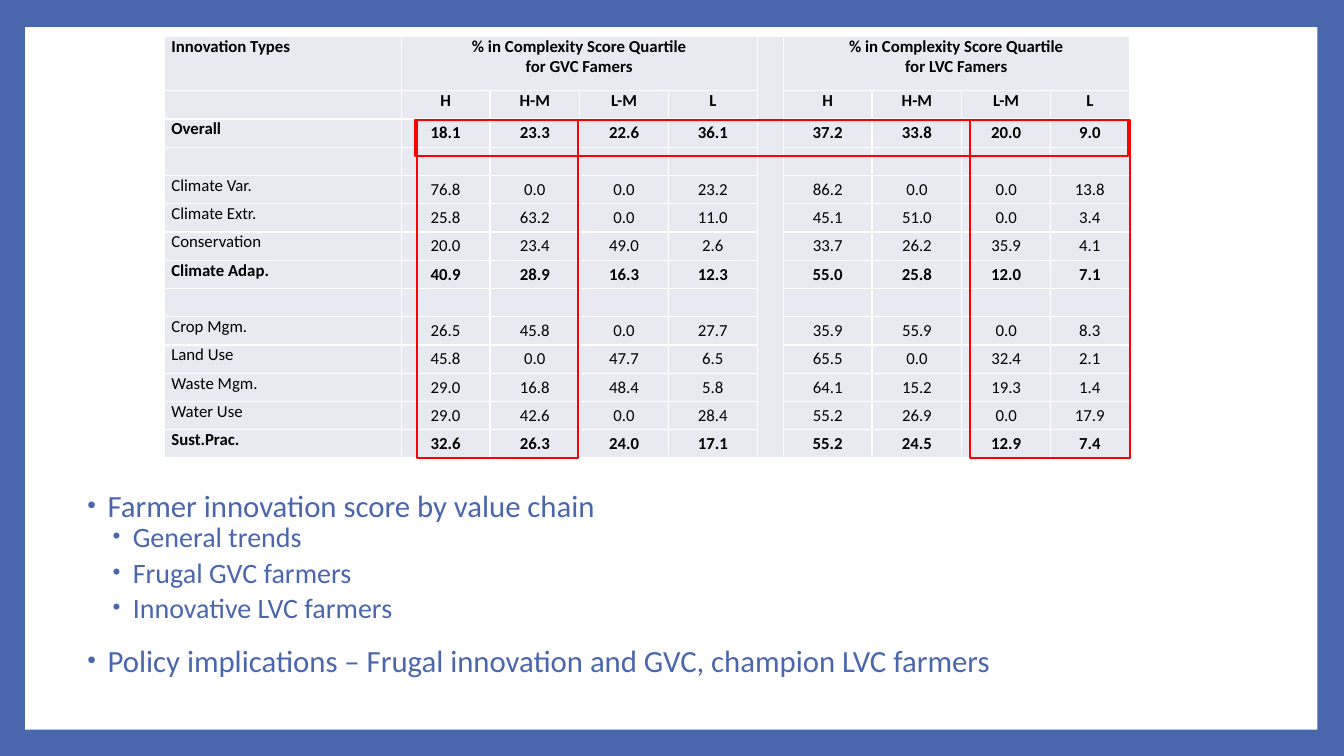
import pptx
import pptx.dml.color
import pptx.enum.shapes
import pptx.enum.text
import pptx.oxml.ns
import pptx.util
from lxml import etree

Pt = pptx.util.Pt
RGBColor = pptx.dml.color.RGBColor
qn = pptx.oxml.ns.qn
ANCHOR = pptx.enum.text.MSO_ANCHOR
ALIGN = pptx.enum.text.PP_ALIGN

BLUE = RGBColor(0x4A, 0x66, 0xAC)
WHITE = RGBColor(0xFF, 0xFF, 0xFF)
BLACK = RGBColor(0, 0, 0)
RED = RGBColor(0xFF, 0, 0)
PALE = RGBColor(0xE9, 0xEA, 0xF1)
FONT = "Calibri"

COLUMN_WIDTHS = [169.2, 63.4, 64.1, 63.4, 63.4, 18.7, 63.4, 64.1, 63.4, 56.2]
HEADER_HEIGHT = 38.9
ROW_HEIGHT = 20.2
GAP_COLUMN = 5
GROUPS = {1: "GVC", 6: "LVC"}
QUARTILES = ["H", "H-M", "L-M", "L"]
BOLD_ROWS = {"Overall", "Climate Adap.", "Sust.Prac."}
SCORES = [
    ("Overall", "18.1 23.3 22.6 36.1 37.2 33.8 20.0 9.0"),
    ("", ""),
    ("Climate Var.", "76.8 0.0 0.0 23.2 86.2 0.0 0.0 13.8"),
    ("Climate Extr.", "25.8 63.2 0.0 11.0 45.1 51.0 0.0 3.4"),
    ("Conservation", "20.0 23.4 49.0 2.6 33.7 26.2 35.9 4.1"),
    ("Climate Adap.", "40.9 28.9 16.3 12.3 55.0 25.8 12.0 7.1"),
    ("", ""),
    ("Crop Mgm.", "26.5 45.8 0.0 27.7 35.9 55.9 0.0 8.3"),
    ("Land Use", "45.8 0.0 47.7 6.5 65.5 0.0 32.4 2.1"),
    ("Waste Mgm.", "29.0 16.8 48.4 5.8 64.1 15.2 19.3 1.4"),
    ("Water Use", "29.0 42.6 0.0 28.4 55.2 26.9 0.0 17.9"),
    ("Sust.Prac.", "32.6 26.3 24.0 17.1 55.2 24.5 12.9 7.4"),
]
POINTS = [
    (0, "Farmer innovation score by value chain"),
    (1, "General trends"),
    (1, "Frugal GVC farmers"),
    (1, "Innovative LVC farmers"),
    (0, "Policy implications – Frugal innovation and GVC, champion LVC farmers"),
]
HIGHLIGHTS = [
    (692.6, 85.7, 114.5, 241.2),
    (298.1, 85.7, 114.5, 241.2),
    (296.6, 85.7, 509, 25.9),
]


def add_span(para, text, size, color, bold=False):
    """Add one formatted run to a paragraph."""
    span = para.add_run()
    span.text = text
    span.font.name = FONT
    span.font.size = Pt(size)
    span.font.bold = bold
    span.font.color.rgb = color


def add_box(page, frame, fill=None, line=None):
    """Add a rectangle with an optional fill and an optional outline."""
    box = page.shapes.add_shape(
        pptx.enum.shapes.MSO_SHAPE.RECTANGLE, *map(Pt, frame))
    box.shadow.inherit = False
    if fill is None:
        box.fill.background()
    else:
        box.fill.solid()
        box.fill.fore_color.rgb = fill
    if line is None:
        box.line.fill.background()
    else:
        box.line.color.rgb = line
        box.line.width = Pt(1.5)


def style_cell(cell):
    """Give a cell its margins, white borders, fill and base text size."""
    cell.margin_left = cell.margin_right = Pt(5)
    cell.margin_top = cell.margin_bottom = 0
    properties = cell._tc.get_or_add_tcPr()
    for side in ("a:lnL", "a:lnR", "a:lnT", "a:lnB"):
        border = etree.SubElement(properties, qn(side), w=str(Pt(1)))
        paint = etree.SubElement(border, qn("a:solidFill"))
        etree.SubElement(paint, qn("a:srgbClr"), val=str(WHITE))
    cell.fill.solid()
    cell.fill.fore_color.rgb = PALE
    para = cell.text_frame.paragraphs[0]
    etree.SubElement(para._p, qn("a:endParaRPr"), sz="1200")


def fill_cell(cell, lines, bold, centred=True, middle=False):
    """Write the lines of a cell, one paragraph each."""
    if middle:
        cell.vertical_anchor = ANCHOR.MIDDLE
    for index, text in enumerate(lines):
        frame = cell.text_frame
        para = frame.add_paragraph() if index else frame.paragraphs[0]
        para.alignment = ALIGN.CENTER if centred else ALIGN.LEFT
        add_span(para, text, 12, BLACK, bold)


def add_score_table(page):
    """Add the table of complexity scores by innovation type."""
    heights = [HEADER_HEIGHT] + [ROW_HEIGHT] * (len(SCORES) + 1)
    table = page.shapes.add_table(
        len(heights), len(COLUMN_WIDTHS), Pt(117.4), Pt(25.9),
        Pt(sum(COLUMN_WIDTHS)), Pt(sum(heights))).table
    table.first_row = table.horz_banding = False
    for column, width in zip(table.columns, COLUMN_WIDTHS):
        column.width = Pt(width)
    for row, height in zip(table.rows, heights):
        row.height = Pt(height)
    for cell in table.iter_cells():
        style_cell(cell)

    table.cell(0, GAP_COLUMN).merge(table.cell(len(heights) - 1, GAP_COLUMN))
    fill_cell(table.cell(0, 0), ["Innovation Types"], True, centred=False)
    for first, chain in GROUPS.items():
        heading = table.cell(0, first)
        heading.merge(table.cell(0, first + len(QUARTILES) - 1))
        fill_cell(heading, ["% in Complexity Score Quartile",
                            f"for {chain} Famers"], True)
        for offset, quartile in enumerate(QUARTILES):
            fill_cell(table.cell(1, first + offset), [quartile], True)

    value_columns = [first + offset for first in GROUPS
                     for offset in range(len(QUARTILES))]
    for row, (label, values) in enumerate(SCORES, start=2):
        if not label:
            continue
        bold = label in BOLD_ROWS
        fill_cell(table.cell(row, 0), [label], bold, centred=False)
        for column, value in zip(value_columns, values.split()):
            fill_cell(table.cell(row, column), [value], bold, middle=True)


def set_bullet(para, level):
    """Give a paragraph its hanging indent and blue bullet."""
    properties = para._p.get_or_add_pPr()
    properties.set("marL", str(Pt(18 * (level + 1))))
    properties.set("indent", str(-Pt(14.4)))
    color = etree.SubElement(properties, qn("a:buClr"))
    etree.SubElement(color, qn("a:srgbClr"), val=str(BLUE))
    etree.SubElement(properties, qn("a:buSzPct"), val="80000")
    etree.SubElement(properties, qn("a:buFont"), typeface="Arial")
    etree.SubElement(properties, qn("a:buChar"), char="•")


def add_points(page):
    """Add the two-level bullet list below the table."""
    box = page.shapes.add_textbox(Pt(51.8), Pt(349.2), Pt(805.7), Pt(146.2))
    frame = box.text_frame
    frame.word_wrap = True
    for index, (level, text) in enumerate(POINTS):
        para = frame.add_paragraph() if index else frame.paragraphs[0]
        para.level = level
        para.line_spacing = 0.8
        para.space_before = Pt(2 if level else 14)
        para.space_after = Pt(4 if level else 0)
        set_bullet(para, level)
        add_span(para, text, 20 if level else 22, BLUE)


def main():
    """Build the slide and save the deck."""
    deck = pptx.Presentation()
    deck.slide_width, deck.slide_height = Pt(960), Pt(540)
    page = deck.slides.add_slide(deck.slide_layouts[6])
    page.background.fill.solid()
    page.background.fill.fore_color.rgb = BLUE
    add_box(page, (18, 19.4, 923, 501.8), fill=WHITE)
    add_points(page)
    add_score_table(page)
    for frame in HIGHLIGHTS:
        add_box(page, frame, line=RED)
    deck.save("out.pptx")


if __name__ == "__main__":
    main()
